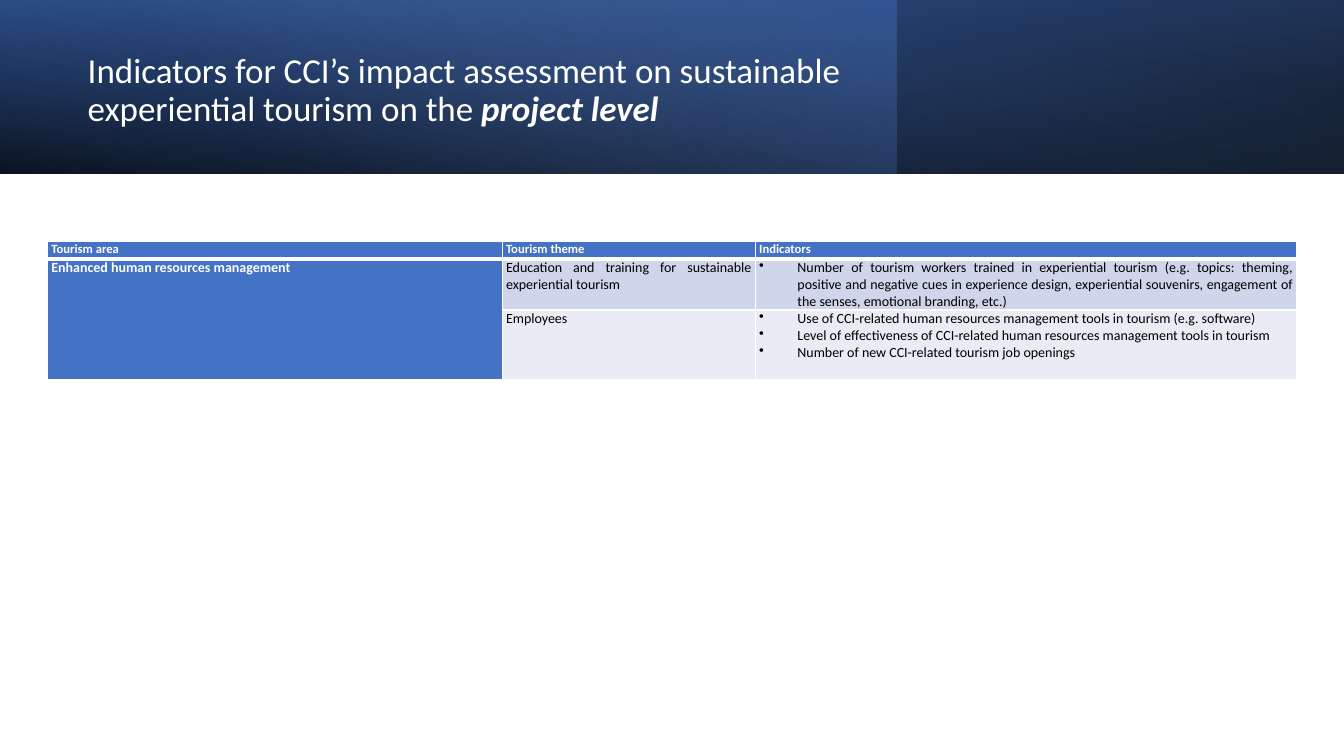
from dataclasses import dataclass

from lxml import etree
from pptx import Presentation
from pptx.dml.color import RGBColor
from pptx.enum.shapes import MSO_SHAPE
from pptx.enum.text import MSO_ANCHOR, MSO_AUTO_SIZE, PP_ALIGN
from pptx.oxml.ns import qn
from pptx.slide import Slide
from pptx.table import _Cell as Cell
from pptx.text.text import _Paragraph as Paragraph
from pptx.util import Inches, Pt

FONT = "Calibri"
WHITE = RGBColor(0xFF, 0xFF, 0xFF)
BLACK = RGBColor(0x00, 0x00, 0x00)
NAVY = RGBColor(0x2F, 0x55, 0x97)
BLUE = RGBColor(0x44, 0x72, 0xC4)
LIGHT_BLUE = RGBColor(0x8F, 0xAA, 0xDC)
BAND_DARK = RGBColor(0xCF, 0xD5, 0xEA)
BAND_LIGHT = RGBColor(0xE9, 0xEB, 0xF5)

SLIDE_W, SLIDE_H, BANNER_H = 13.33, 7.5, 1.72
COL_WIDTHS = (4.51, 2.51, 5.37)
ROW_HEIGHTS = (0.18, 0.49, 0.69)
HANGING = 0.38


@dataclass(frozen=True)
class Stop:
    position: float
    color: RGBColor
    opacity: int = 100


@dataclass(frozen=True)
class BannerLayer:
    width: float
    angle: int  # clockwise degrees
    stops: tuple[Stop, Stop]
    rotation: int = 0
    flipped: bool = False


@dataclass(frozen=True)
class CellStyle:
    fill: RGBColor
    color: RGBColor = BLACK
    size: int = 10
    bold: bool = False


BANNER = (
    BannerLayer(SLIDE_W, 100, (Stop(0, BLACK, 96), Stop(1, NAVY)), 180, True),
    BannerLayer(8.89, 140, (Stop(0, BLUE, 41), Stop(0.74, LIGHT_BLUE, 0))),
    BannerLayer(SLIDE_W, 260, (Stop(0, BLACK, 63), Stop(0.78, BLUE, 15)), flipped=True),
)

HEADER = CellStyle(BLUE, WHITE, 9, True)
AREA = CellStyle(BLUE, WHITE, bold=True)
HEADINGS = ("Tourism area", "Tourism theme", "Indicators")
AREA_NAME = "Enhanced human resources management"
THEMES = (
    (
        "Education and training for sustainable experiential tourism",
        (
            "Number of tourism workers trained in experiential tourism (e.g. topics: "
            "theming, positive and negative cues in experience design, experiential "
            "souvenirs, engagement of the senses, emotional branding, etc.)",
        ),
        CellStyle(BAND_DARK),
    ),
    (
        "Employees",
        (
            "Use of CCI-related human resources management tools in tourism (e.g. software)",
            "Level of effectiveness of CCI-related human resources management tools in tourism",
            "Number of new CCI-related tourism job openings",
        ),
        CellStyle(BAND_LIGHT),
    ),
)


def add_banner_layer(s: Slide, layer: BannerLayer) -> None:
    sp = s.shapes.add_shape(
        MSO_SHAPE.RECTANGLE, 0, 0, Inches(layer.width), Inches(BANNER_H)
    )
    sp.shadow.inherit = False
    sp.line.fill.background()
    sp.rotation = layer.rotation
    if layer.flipped:
        sp._element.spPr.find(qn("a:xfrm")).set("flipH", "1")
    sp.fill.gradient()
    sp.fill.gradient_angle = 360 - layer.angle
    for gradient_stop, stop in zip(sp.fill.gradient_stops, layer.stops):
        gradient_stop.position = stop.position
        gradient_stop.color.rgb = stop.color
    colors = sp._element.spPr.iter(qn("a:srgbClr"))
    for color, stop in zip(colors, layer.stops):
        etree.SubElement(color, qn("a:alpha")).set("val", str(stop.opacity * 1000))


def add_title(s: Slide) -> None:
    title = s.shapes.title
    title.left, title.top = Inches(0.77), Inches(0.27)
    title.width, title.height = Inches(7.72), Inches(1.27)
    tf = title.text_frame
    tf.word_wrap = True
    tf.auto_size = MSO_AUTO_SIZE.NONE
    tf.vertical_anchor = MSO_ANCHOR.MIDDLE
    p = tf.paragraphs[0]
    p.alignment = PP_ALIGN.LEFT
    p.line_spacing = 0.9
    p.text = (
        "Indicators for CCI’s impact assessment on sustainable "
        "experiential tourism on the "
    )
    emphasis = p.add_run()
    emphasis.text = "project level"
    for r in p.runs:
        r.font.name, r.font.size = FONT, Pt(25)
        r.font.color.rgb = WHITE
    emphasis.font.bold = emphasis.font.italic = True


def add_bullet(p: Paragraph) -> None:
    pPr = p._p.get_or_add_pPr()
    pPr.set("marL", str(Inches(HANGING)))
    pPr.set("indent", str(-Inches(HANGING)))
    etree.SubElement(pPr, qn("a:buChar")).set("char", "•")


def set_borders(cell: Cell, top: int = 1, bottom: int = 1) -> None:
    """Draw white cell borders, with widths in points."""
    tcPr = cell._tc.get_or_add_tcPr()
    widths = {"lnL": 1, "lnR": 1, "lnT": top, "lnB": bottom}
    for i, (side, width) in enumerate(widths.items()):
        ln = etree.Element(qn(f"a:{side}"), w=str(Pt(width)))
        fill = etree.SubElement(ln, qn("a:solidFill"))
        etree.SubElement(fill, qn("a:srgbClr")).set("val", str(WHITE))
        tcPr.insert(i, ln)


def fill_cell(
    cell: Cell, lines: tuple[str, ...], style: CellStyle, bulleted: bool = False
) -> None:
    cell.margin_left = cell.margin_right = Inches(0.04)
    cell.margin_top = cell.margin_bottom = 0
    cell.fill.solid()
    cell.fill.fore_color.rgb = style.fill
    tf = cell.text_frame
    tf.text = "\n".join(lines)
    for p in tf.paragraphs:
        p.alignment = PP_ALIGN.JUSTIFY
        if bulleted:
            add_bullet(p)
        for r in p.runs:
            r.font.name, r.font.size = FONT, Pt(style.size)
            r.font.bold = style.bold
            r.font.color.rgb = style.color


def add_indicator_table(s: Slide) -> None:
    table = s.shapes.add_table(
        len(ROW_HEIGHTS), len(COL_WIDTHS), Inches(0.47), Inches(2.39),
        Inches(sum(COL_WIDTHS)), Inches(sum(ROW_HEIGHTS)),
    ).table
    for column, width in zip(table.columns, COL_WIDTHS):
        column.width = Inches(width)
    for row, height in zip(table.rows, ROW_HEIGHTS):
        row.height = Inches(height)

    for col, heading in enumerate(HEADINGS):
        cell = table.cell(0, col)
        fill_cell(cell, (heading,), HEADER)
        p = cell.text_frame.paragraphs[0]
        p.line_spacing, p.space_after = 1.07, Pt(8)
    table.cell(1, 0).merge(table.cell(2, 0))
    fill_cell(table.cell(1, 0), (AREA_NAME,), AREA)
    for row, (theme, indicators, style) in enumerate(THEMES, start=1):
        fill_cell(table.cell(row, 1), (theme,), style)
        fill_cell(table.cell(row, 2), indicators, style, bulleted=True)

    for row in range(len(ROW_HEIGHTS)):
        for col in range(len(COL_WIDTHS)):
            set_borders(
                table.cell(row, col),
                top=3 if row == 1 else 1,
                bottom=3 if row == 0 else 1,
            )


def main() -> None:
    prs = Presentation()
    prs.slide_width, prs.slide_height = Inches(SLIDE_W), Inches(SLIDE_H)
    s = prs.slides.add_slide(prs.slide_layouts.get_by_name("Title Only"))
    for layer in BANNER:
        add_banner_layer(s, layer)
    s.shapes._spTree.append(s.shapes.title._element)
    add_title(s)
    add_indicator_table(s)
    prs.save("out.pptx")


if __name__ == "__main__":
    main()
